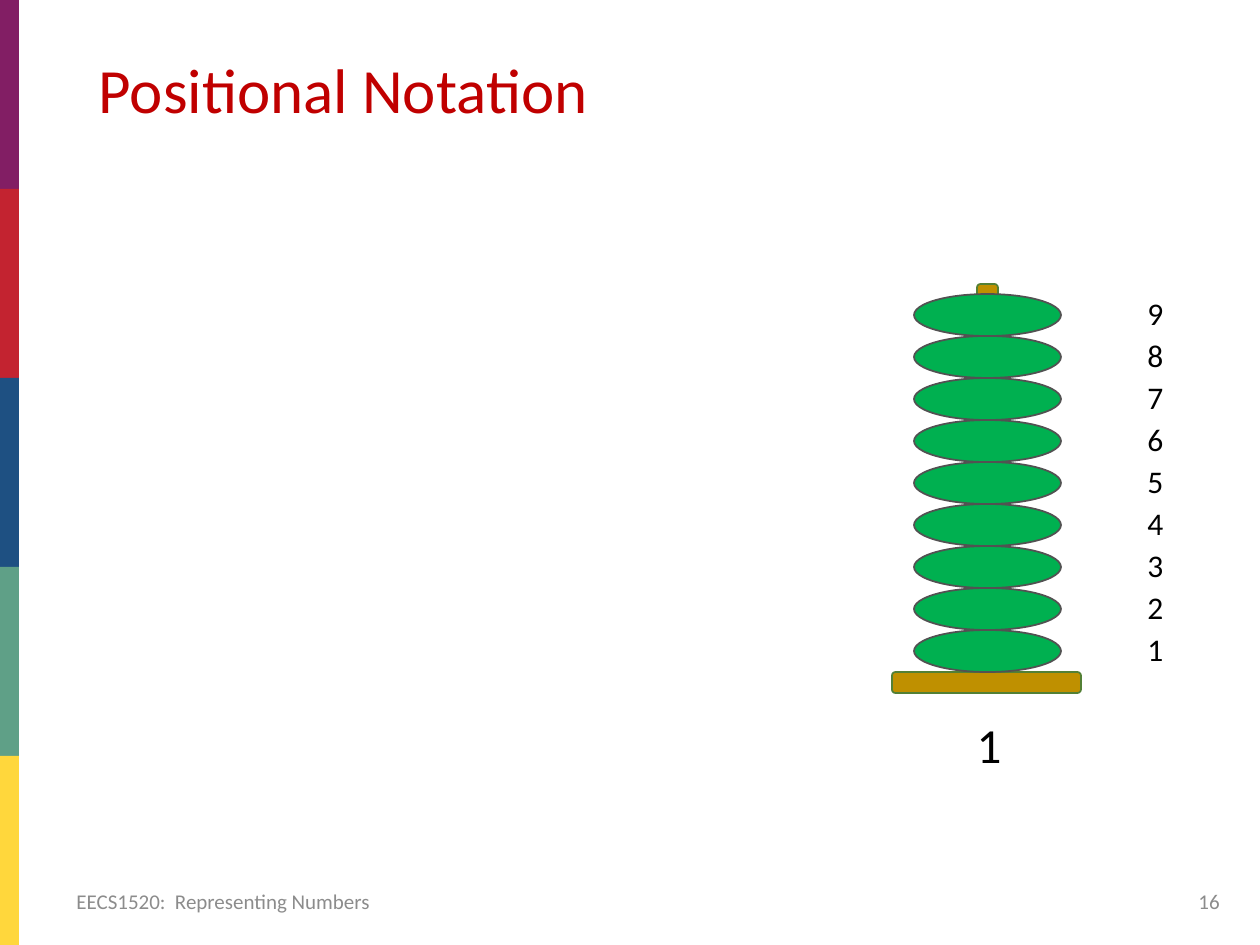
import pptx
import pptx.util
import pptx.dml.color
import pptx.enum.shapes
import pptx.enum.text

RGBColor = pptx.dml.color.RGBColor
Shape = pptx.enum.shapes.MSO_SHAPE
Align = pptx.enum.text.PP_ALIGN
Anchor = pptx.enum.text.MSO_ANCHOR

PX_PER_INCH = 126
FONT = "Calibri"

PURPLE = RGBColor(0x82, 0x1E, 0x64)
RED = RGBColor(0xC3, 0x23, 0x30)
BLUE = RGBColor(0x1E, 0x50, 0x82)
SAGE = RGBColor(0x5F, 0xA0, 0x87)
YELLOW = RGBColor(0xFF, 0xD7, 0x3C)
WOOD = RGBColor(0xBF, 0x90, 0x00)
WOOD_EDGE = RGBColor(0x53, 0x80, 0x35)
BEAD = RGBColor(0x00, 0xB0, 0x50)
BEAD_EDGE = RGBColor(0x52, 0x52, 0x52)
TITLE_RED = RGBColor(0xC0, 0x00, 0x00)
GREY = RGBColor(0x8C, 0x8C, 0x8C)
BLACK = RGBColor(0x00, 0x00, 0x00)


def emu(px):
    return pptx.util.Emu(round(px * 914400 / PX_PER_INCH))


class SlideBuilder:
    """Holds the font and the current slide; adds one element per call."""

    def __init__(self, slide, font):
        self.slide = slide
        self.font = font

    def shape(self, kind, left, top, width, height, fill, edge=None):
        shape = self.slide.shapes.add_shape(kind, *map(emu, (left, top, width, height)))
        shape.shadow.inherit = False
        shape.fill.solid()
        shape.fill.fore_color.rgb = fill
        if edge is None:
            shape.line.fill.background()
        else:
            shape.line.color.rgb = edge
            shape.line.width = pptx.util.Pt(1)

    def fill_text(self, frame, lines, size, color, align, spacing=None):
        frame.text = "\n".join(lines)
        for paragraph in frame.paragraphs:
            paragraph.alignment = align
            paragraph.line_spacing = spacing
            paragraph.font.name = self.font
            paragraph.font.size = pptx.util.Pt(size)
            paragraph.font.color.rgb = color

    def title(self, text, left, top, width, height):
        title = self.slide.shapes.title
        title.left, title.top, title.width, title.height = map(emu, (left, top, width, height))
        title.text_frame.vertical_anchor = Anchor.TOP
        self.fill_text(title.text_frame, [text], 36, TITLE_RED, Align.LEFT, 0.9)

    def text(self, lines, left, top, width, height, size, color=BLACK,
             align=Align.LEFT, anchor=Anchor.TOP, spacing=None, wrap=True):
        box = self.slide.shapes.add_textbox(*map(emu, (left, top, width, height)))
        box.text_frame.word_wrap = wrap
        box.text_frame.vertical_anchor = anchor
        self.fill_text(box.text_frame, lines, size, color, align, spacing)


def main():
    deck = pptx.Presentation()
    deck.slide_width, deck.slide_height = emu(1260), emu(945)
    title_only = deck.slide_layouts[5]
    page = SlideBuilder(deck.slides.add_slide(title_only), FONT)

    # Colour band down the left edge
    band_height = 189
    for index, color in enumerate((PURPLE, RED, BLUE, SAGE, YELLOW)):
        page.shape(Shape.RECTANGLE, 0, index * band_height, 19, band_height, color)

    page.title("Positional Notation", 86, 53, 1168, 127)

    # Abacus: rod and base, then nine beads stacked upwards from the base
    center, base_top = 987, 672
    bead_width, bead_height, bead_count = 147, 42, 9
    page.shape(Shape.ROUNDED_RECTANGLE, center - 10, 284, 21, 399, WOOD, WOOD_EDGE)
    page.shape(Shape.ROUNDED_RECTANGLE, center - 95, base_top, 189, 21, WOOD, WOOD_EDGE)
    for number in range(1, bead_count + 1):
        page.shape(Shape.OVAL, center - bead_width // 2, base_top - number * bead_height,
                   bead_width, bead_height, BEAD, BEAD_EDGE)

    # Bead numbers and place value; 24 pt lines match the bead height
    numbers = [str(number) for number in range(bead_count, 0, -1)]
    page.text(numbers, 1135, 284, 37, 392, 18, spacing=pptx.util.Pt(24))
    page.text(["1"], 964, 708, 50, 72, 28, align=Align.CENTER, wrap=False)

    # Footer
    page.text(["EECS1520:  Representing Numbers"], 64, 876, 641, 50, 12, GREY,
              anchor=Anchor.MIDDLE)
    page.text(["16"], 949, 876, 283, 50, 12, GREY, Align.RIGHT, Anchor.MIDDLE)

    deck.save("out.pptx")


if __name__ == "__main__":
    main()
